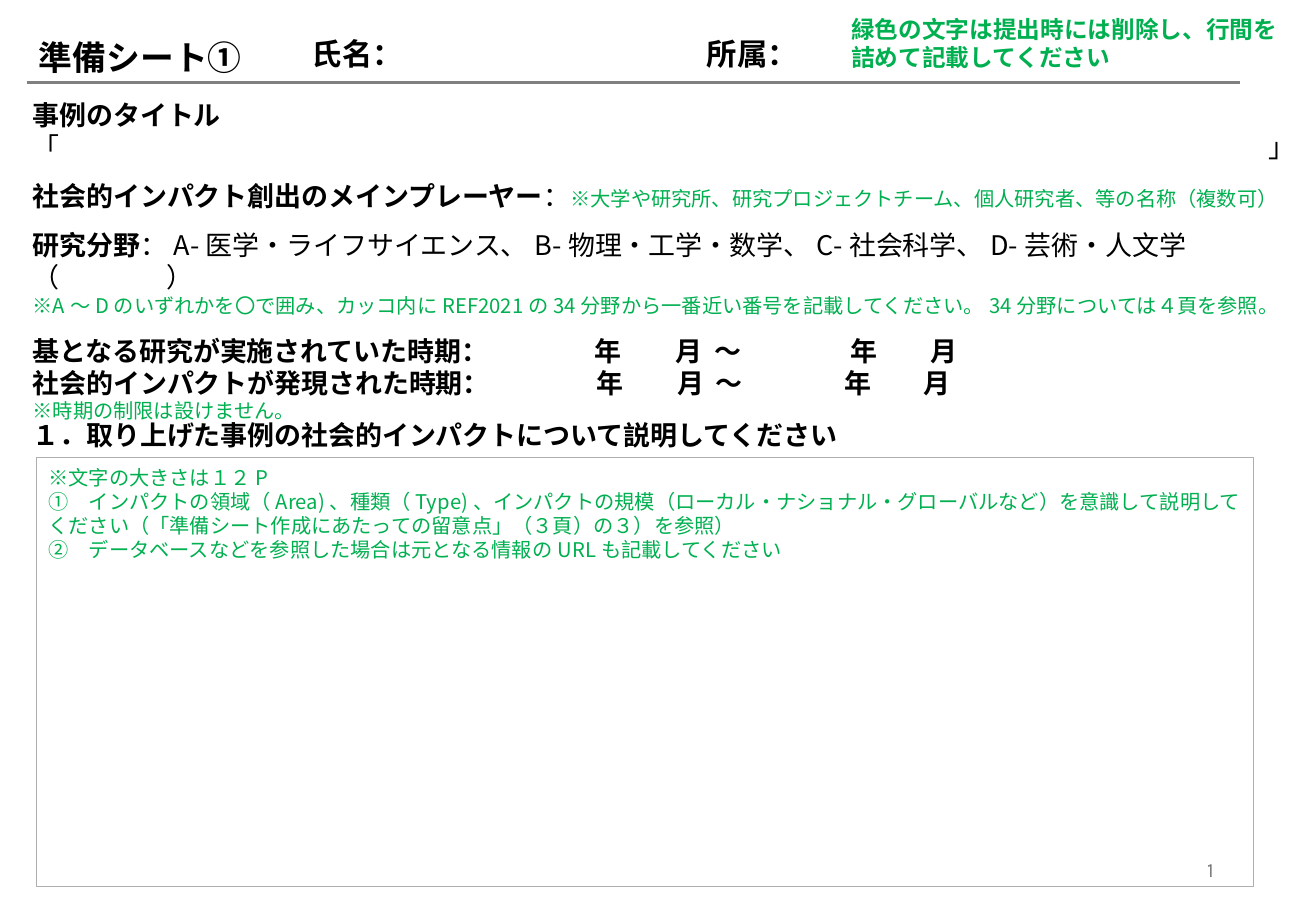
from dataclasses import dataclass

from lxml import etree
from pptx import Presentation
from pptx import util as u
from pptx.dml.color import RGBColor
from pptx.enum import shapes, text
from pptx.oxml import ns

Pt = u.Pt


@dataclass(frozen=True)
class Style:
    """Look of one run of text."""
    size: int
    colour: str
    bold: bool = False
    latin: str = "Noto Sans CJK JP"


@dataclass(frozen=True)
class Theme:
    """Colours, type sizes and spacing of the sheet."""
    east_asian: str = "Noto Sans CJK JP"
    rule: str = "808080"
    frame: str = "AEAEAE"
    title: Style = Style(20, "000000", True)
    field: Style = Style(18, "000000", True, "Karla")
    label: Style = Style(16, "000000", True)
    body: Style = Style(16, "000000")
    hint: Style = Style(12, "00B050")
    notice: Style = Style(14, "00B050", True)
    page: Style = Style(12, "797979", False, "Karla")
    leading: float = 1.19
    gap: int = 10
    inset_side: float = 7.2
    inset_top: float = 4.6


THEME = Theme()


@dataclass(frozen=True)
class Line:
    """One paragraph: its (text, style) pieces, tab stops and space before."""
    pieces: tuple
    tabs: tuple = ()
    before: float = 0


def plain(style, *wordings):
    """Return one single-style line for each wording."""
    return [Line(((wording, style),)) for wording in wordings]


def style_run(run, style):
    """Apply a style to a run, with the same East Asian font throughout."""
    run.font.size = Pt(style.size)
    run.font.bold = style.bold
    run.font.name = style.latin
    run.font.color.rgb = RGBColor.from_string(style.colour)
    east_asian = etree.SubElement(run.font._element, ns.qn("a:ea"))
    east_asian.set("typeface", THEME.east_asian)


def set_tabs(paragraph, stops):
    """Add left tab stops, in points, to a paragraph."""
    tab_list = etree.SubElement(paragraph._p.get_or_add_pPr(), ns.qn("a:tabLst"))
    for stop in stops:
        etree.SubElement(tab_list, ns.qn("a:tab"), pos=str(int(Pt(stop))), algn="l")


def write_lines(shape, lines, align=text.PP_ALIGN.LEFT, anchor=text.MSO_ANCHOR.TOP):
    """Fill a shape with lines of text."""
    frame = shape.text_frame
    frame.word_wrap = True
    frame.auto_size = text.MSO_AUTO_SIZE.NONE
    frame.vertical_anchor = anchor
    frame.margin_left = frame.margin_right = Pt(THEME.inset_side)
    frame.margin_top, frame.margin_bottom = Pt(THEME.inset_top), Pt(3.6)
    for index, line in enumerate(lines):
        paragraph = frame.add_paragraph() if index else frame.paragraphs[0]
        paragraph.alignment = align
        size = max(style.size for _, style in line.pieces)
        paragraph.line_spacing = Pt(round(size * THEME.leading, 2))
        paragraph.space_before = Pt(line.before)
        paragraph.space_after = Pt(0)
        if line.tabs:
            set_tabs(paragraph, line.tabs)
        for wording, style in line.pieces:
            run = paragraph.add_run()
            run.text = wording
            style_run(run, style)


def add_text(slide, box, lines, **layout):
    """Add a text box at (left, top, width, height) in points."""
    write_lines(slide.shapes.add_textbox(*map(Pt, box)), lines, **layout)


def place_title(slide, box, wording):
    """Move the title placeholder and write the title."""
    title = slide.shapes.title
    title.left, title.top, title.width, title.height = map(Pt, box)
    write_lines(title, plain(THEME.title, wording))


def add_rule(slide, left, right, y):
    """Draw the horizontal rule under the header."""
    rule = slide.shapes.add_connector(
        shapes.MSO_CONNECTOR.STRAIGHT, Pt(left), Pt(y), Pt(right), Pt(y))
    rule.line.color.rgb = RGBColor.from_string(THEME.rule)
    rule.line.width = Pt(1.5)
    etree.SubElement(rule._element.spPr, ns.qn("a:effectLst"))


def add_answer_frame(slide, box, lines):
    """Add the outlined answer area with its hints."""
    answer = slide.shapes.add_shape(shapes.MSO_SHAPE.RECTANGLE, *map(Pt, box))
    answer.shadow.inherit = False
    answer.fill.background()
    answer.line.color.rgb = RGBColor.from_string(THEME.frame)
    answer.line.width = Pt(0.75)
    write_lines(answer, lines)


def case_lines():
    """Return the lines of the case description form."""
    label, body, hint, gap = THEME.label, THEME.body, THEME.hint, THEME.gap
    dates = "\t年\t月\t～\t年\t月"
    return [
        Line((("事例のタイトル", label),)),
        Line((("「\t」", body),), (732.5,)),
        Line((("社会的インパクト創出のメインプレーヤー", label), ("：", body),
              ("※大学や研究所、研究プロジェクトチーム、個人研究者、等の名称（複数可）", hint)),
             before=gap),
        Line((("研究分野", label),
              ("：A-医学・ライフサイエンス、B-物理・工学・数学、C-社会科学、D-芸術・人文学", body)),
             before=gap),
        Line((("（\t）", body),), (79.5,)),
        Line((("※A～Dのいずれかを〇で囲み、カッコ内にREF2021の34分野から一番近い番号を"
               "記載してください。34分野については４頁を参照。", hint),)),
        Line((("基となる研究が実施されていた時期：" + dates, label),),
             (333, 381, 404, 485, 532), gap),
        Line((("社会的インパクトが発現された時期：" + dates, label),),
             (334, 382, 405, 481, 528)),
        Line((("※時期の制限は設けません。", hint),)),
    ]


def main():
    """Build the preparation sheet."""
    deck = Presentation()
    deck.slide_width, deck.slide_height = Pt(780), Pt(540)
    slide = deck.slides.add_slide(deck.slide_layouts[5])

    place_title(slide, (15.84, 17.3, 135.4, 31.7), "準備シート①")
    add_text(slide, (550.8, 500.4, 175.7, 28.8), plain(THEME.page, "1"),
             align=text.PP_ALIGN.RIGHT, anchor=text.MSO_ANCHOR.MIDDLE)
    add_text(slide, (12.24, 54, 776.9, 181.4), case_lines())
    add_text(slide, (177.8, 16.6, 305.3, 28.8),
             [Line((("氏名：\t所属：", THEME.field),), (234,))])
    add_rule(slide, 15.84, 735.1, 49)
    add_text(slide, (497.5, 4.3, 269.3, 41),
             plain(THEME.notice, "緑色の文字は提出時には削除し、行間を", "詰めて記載してください"))
    add_text(slide, (12.24, 243.4, 746.6, 97.2),
             plain(THEME.label, "１．取り上げた事例の社会的インパクトについて説明してください"))
    add_answer_frame(slide, (21.6, 271.4, 721.4, 254.2), plain(
        THEME.hint,
        "※文字の大きさは１２P",
        "①　インパクトの領域（Area)、種類（Type)、インパクトの規模（ローカル・ナショナル・"
        "グローバルなど）を意識して説明してください（「準備シート作成にあたっての留意点」"
        "（３頁）の３）を参照）",
        "②　データベースなどを参照した場合は元となる情報のURLも記載してください"))

    deck.save("out.pptx")


if __name__ == "__main__":
    main()
